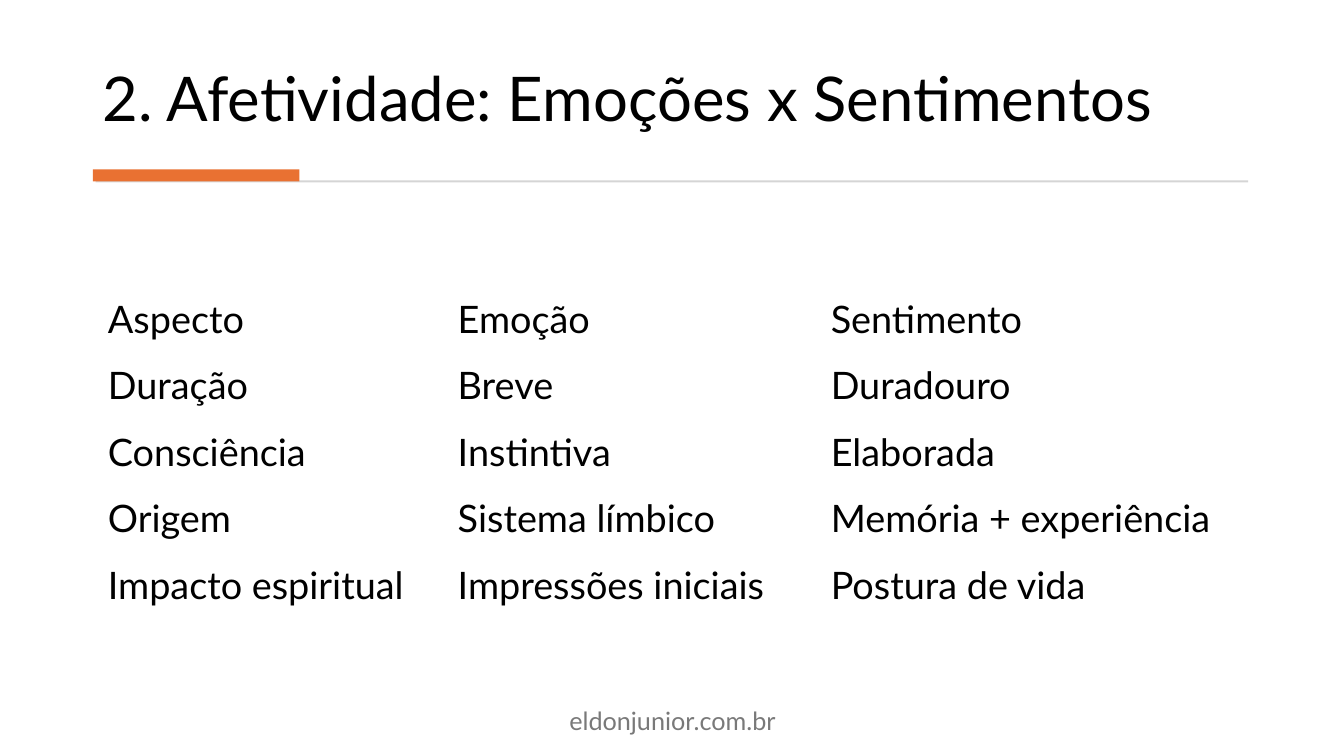
from pptx import Presentation
from pptx.dml.color import RGBColor
from pptx.enum.shapes import MSO_SHAPE
from pptx.enum.text import MSO_ANCHOR, PP_ALIGN
from pptx.util import Inches, Pt

FONT = "Lato"
BLACK = "000000"
LEFT = 0.92

COLUMN_WIDTHS = [3.47, 3.7, 4.34]
ROW_HEIGHT = 0.66
COMPARISON = [
    ["Aspecto", "Emoção", "Sentimento"],
    ["Duração", "Breve", "Duradouro"],
    ["Consciência", "Instintiva", "Elaborada"],
    ["Origem", "Sistema límbico", "Memória + experiência"],
    ["Impacto espiritual", "Impressões iniciais", "Postura de vida"],
]


def color(hex_value):
    return RGBColor.from_string(hex_value)


def add_run(paragraph, text, size, hex_value):
    run = paragraph.add_run()
    run.text = text
    run.font.name = FONT
    run.font.size = Pt(size)
    run.font.color.rgb = color(hex_value)


def add_text(slide, box, text, size, hex_value, anchor, align, spacing=1.0):
    frame = slide.shapes.add_textbox(*map(Inches, box)).text_frame
    frame.word_wrap = True
    frame.vertical_anchor = anchor
    paragraph = frame.paragraphs[0]
    paragraph.alignment = align
    paragraph.line_spacing = spacing
    add_run(paragraph, text, size, hex_value)


def add_bar(slide, box, hex_value):
    bar = slide.shapes.add_shape(MSO_SHAPE.RECTANGLE, *map(Inches, box))
    bar.shadow.inherit = False
    bar.fill.solid()
    bar.fill.fore_color.rgb = color(hex_value)
    bar.line.fill.background()


def add_comparison(slide, left, top):
    table = slide.shapes.add_table(
        len(COMPARISON), len(COLUMN_WIDTHS), Inches(left), Inches(top),
        Inches(sum(COLUMN_WIDTHS)), Inches(ROW_HEIGHT * len(COMPARISON))).table
    table.first_row = False
    table.horz_banding = False
    for column, width in zip(table.columns, COLUMN_WIDTHS):
        column.width = Inches(width)
    for row, texts in zip(table.rows, COMPARISON):
        row.height = Inches(ROW_HEIGHT)
        for cell, text in zip(row.cells, texts):
            cell.fill.background()
            cell.vertical_anchor = MSO_ANCHOR.MIDDLE
            cell.margin_left = cell.margin_right = Inches(0.15)
            cell.margin_top = cell.margin_bottom = Inches(0.08)
            add_run(cell.text_frame.paragraphs[0], text, 27, BLACK)


def main():
    deck = Presentation()
    deck.slide_width = Inches(13.33)
    deck.slide_height = Inches(7.5)
    slide = deck.slides.add_slide(deck.slide_layouts[6])

    # Title
    add_text(slide, (LEFT, 0.28, 11.49, 1.11),
             "2. Afetividade: Emoções x Sentimentos", 44, BLACK,
             MSO_ANCHOR.BOTTOM, PP_ALIGN.LEFT, spacing=0.9)

    # Divider with accent
    add_bar(slide, (0.95, 1.79, 11.43, 0.02), "D5D5D5")
    add_bar(slide, (LEFT, 1.68, 2.05, 0.12), "E97132")

    # Emotion and feeling compared
    add_comparison(slide, LEFT, 2.83)

    # Footer
    add_text(slide, (4.42, 6.95, 4.5, 0.4), "eldonjunior.com.br", 18, "797979",
             MSO_ANCHOR.MIDDLE, PP_ALIGN.CENTER)

    deck.save("out.pptx")


if __name__ == "__main__":
    main()
